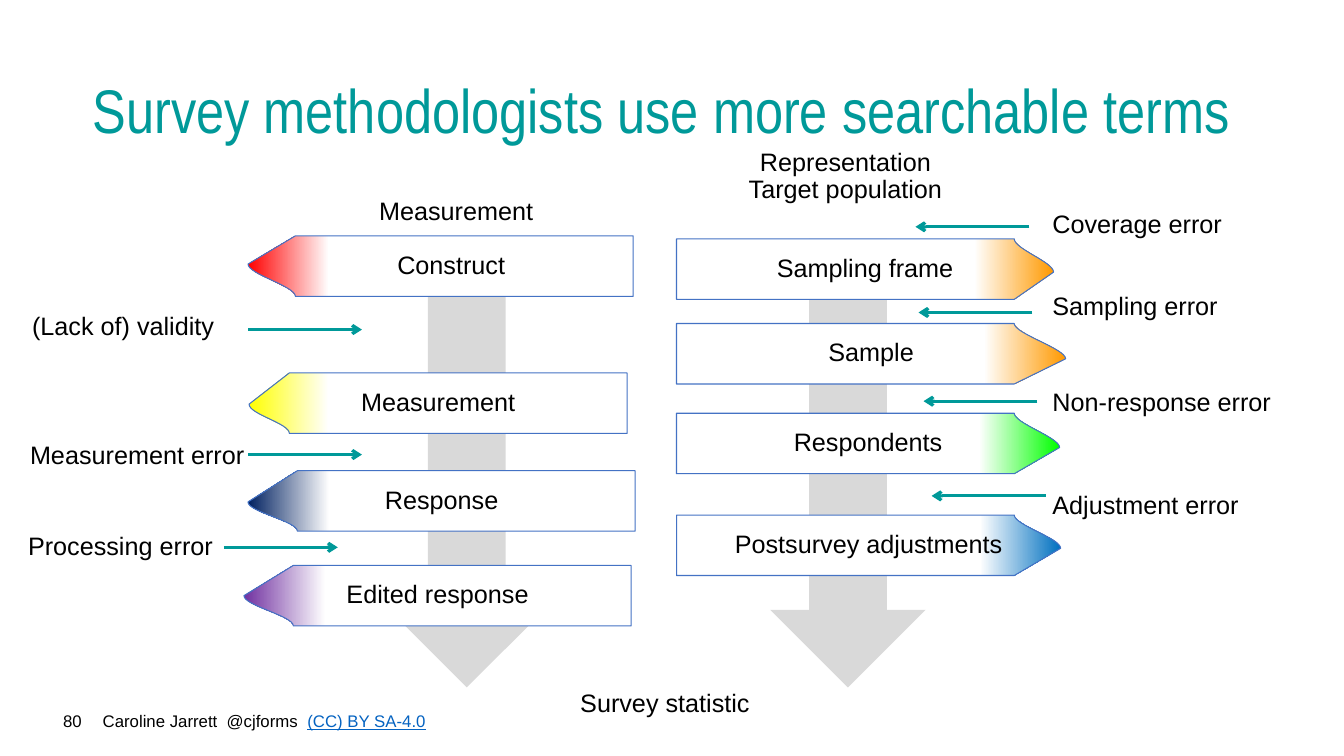
from lxml.etree import SubElement
from pptx import Presentation
from pptx.dml.color import RGBColor
from pptx.enum.shapes import MSO_CONNECTOR, MSO_SHAPE
from pptx.enum.text import MSO_ANCHOR, PP_ALIGN
from pptx.oxml.ns import qn
from pptx.util import Inches, Pt

COLOURS = {
    "text": "000000", "teal": "009999", "link": "0563C1", "outline": "4472C4",
    "flow": "D9D9D9", "white": "FFFFFF", "red": "FF0000", "yellow": "FFFF00",
    "navy": "002060", "purple": "7030A0", "orange": "FF9900", "green": "00FF00",
    "blue": "0070C0",
}

TITLE = "Survey methodologists use more searchable terms"
AUTHOR = "Caroline Jarrett  @cjforms  "
LICENCE = "(CC) BY SA-4.0"
SLIDE_NUMBER = "80"

# text, (left, top, width, height)
HEADINGS = [
    ("Measurement", (2.79, 1.82, 3.47, 0.57)),
    ("Representation\nTarget population", (7.13, 1.47, 2.51, 0.57)),
    ("Survey statistic", (5.34, 6.69, 2.51, 0.6)),
]

# name, colour, top, square end x, pointed end x, depth of the point, left inset
MEASUREMENT_STEPS = [
    ("Construct", "red", 2.34, 6.28, 2.46, 0.28, 0.24),
    ("Measurement", "yellow", 3.7, 6.22, 2.47, 0.31, 0.03),
    ("Response", "navy", 4.67, 6.3, 2.46, 0.31, 0.03),
    ("Edited response", "purple", 5.61, 6.26, 2.42, 0.3, 0.03),
]
REPRESENTATION_STEPS = [
    ("Sampling frame", "orange", 2.37, 6.71, 10.45, 0.33, 0.03),
    ("Sample", "orange", 3.21, 6.71, 10.57, 0.35, 0.03),
    ("Respondents", "green", 4.1, 6.71, 10.51, 0.34, 0.03),
    ("Postsurvey adjustments", "blue", 5.11, 6.71, 10.52, 0.33, 0.03),
]

# text, label left, label centre y, arrow start x, arrow y, arrow direction
ERRORS = [
    ("(Lack of) validity", 0.22, 3.23, 2.46, 3.27, 1),
    ("Measurement error", 0.2, 4.51, 2.46, 4.51, 1),
    ("Processing error", 0.18, 5.41, 2.22, 5.43, 1),
    ("Coverage error", 10.34, 2.22, 10.21, 2.25, -1),
    ("Sampling error", 10.34, 3.03, 10.24, 3.1, -1),
    ("Non-response error", 10.34, 3.98, 10.29, 3.98, -1),
    ("Adjustment error", 10.34, 5.0, 10.37, 4.92, -1),
]

FLOW_LEFTS = [3.86, 7.64]
STEP_HEIGHT, STEP_BODY = 0.6, 3.35
ERROR_ARROW = 1.13
CURVE_PULL, CURVE_SEGMENTS = 0.1, 16


def rgb(name):
    return RGBColor.from_string(COLOURS[name])


def write(shape, text, size=18, font="Arial", colour="text", align=PP_ALIGN.LEFT,
          anchor=MSO_ANCHOR.MIDDLE, spacing=1.0, inset=(0.1, 0.05, 0.1, 0.05), link=""):
    """Fill a shape with one paragraph; link is an underlined ending."""
    frame = shape.text_frame
    frame.word_wrap = True
    frame.vertical_anchor = anchor
    (frame.margin_left, frame.margin_top,
     frame.margin_right, frame.margin_bottom) = map(Inches, inset)
    paragraph = frame.paragraphs[0]
    paragraph.text = text
    paragraph.alignment = align
    paragraph.line_spacing = spacing
    if link:
        paragraph.add_run().text = link
    for run in paragraph.runs:
        is_link = run.text == link
        run.font.size = Pt(size)
        run.font.name = font
        run.font.color.rgb = rgb("link" if is_link else colour)
        run.font.underline = is_link


def add_text(slide, box, text, **text_format):
    write(slide.shapes.add_textbox(*map(Inches, box)), text, **text_format)


def write_centred(shape, text, left_inset=0.03):
    write(shape, text, align=PP_ALIGN.CENTER, spacing=0.9,
          inset=(left_inset, 0.03, 0.03, 0.03))


def curve(start, end, pull):
    """Points along a cubic that leaves and arrives vertically."""
    controls = [start, (start[0], start[1] + pull), (end[0], end[1] - pull), end]
    for step in range(1, CURVE_SEGMENTS + 1):
        t = step / CURVE_SEGMENTS
        weights = [(1 - t) ** 3, 3 * t * (1 - t) ** 2, 3 * t ** 2 * (1 - t), t ** 3]
        yield tuple(sum(w * c[axis] for w, c in zip(weights, controls))
                    for axis in (0, 1))


def add_step(slide, name, colour, top, square_end, tip, depth, left_inset):
    """Box with one pointed end: curved on one side of the tip, straight on the other."""
    points_right = tip > square_end
    direction = 1 if points_right else -1
    shoulder = square_end + direction * STEP_BODY
    bottom = top + STEP_HEIGHT
    curved, straight = (top, bottom) if points_right else (bottom, top)
    outline = [
        (shoulder, curved),
        *curve((shoulder, curved), (tip, top + depth), direction * CURVE_PULL),
        (shoulder, straight), (square_end, straight), (square_end, curved),
    ]
    corners = [(Inches(x), Inches(y)) for x, y in outline]
    builder = slide.shapes.build_freeform(*corners[0])
    builder.add_line_segments(corners[1:], close=True)
    box = builder.convert_to_shape()
    box.shadow.inherit = False
    box.fill.gradient()
    box.fill.gradient_angle = 180 if points_right else 0
    for stop, position, shade in zip(box.fill.gradient_stops, (0, 0.21), (colour, "white")):
        stop.position = position
        stop.color.rgb = rgb(shade)
    box.line.color.rgb = rgb("outline")
    box.line.width = Pt(0.75)
    write_centred(box, name, left_inset)


def add_flow(slide, left):
    flow = slide.shapes.add_shape(MSO_SHAPE.DOWN_ARROW, *map(Inches, (left, 2.37, 1.54, 4.45)))
    flow.shadow.inherit = False
    flow.fill.solid()
    flow.fill.fore_color.rgb = rgb("flow")
    flow.line.fill.background()


def add_error(slide, text, label_left, label_centre, start, y, direction):
    end = start + direction * ERROR_ARROW
    arrow = slide.shapes.add_connector(MSO_CONNECTOR.STRAIGHT,
                                       *map(Inches, (start, y, end, y)))
    arrow.line.color.rgb = rgb("teal")
    arrow.line.width = Pt(2.25)
    SubElement(arrow.line._get_or_add_ln(), qn("a:tailEnd"), type="arrow")
    SubElement(arrow._element.spPr, qn("a:effectLst"))
    add_text(slide, (label_left, label_centre - 0.44, 2.6, 0.88), text)


def main():
    presentation = Presentation()
    presentation.slide_width = Inches(13.33)
    presentation.slide_height = Inches(7.5)
    slide = presentation.slides.add_slide(presentation.slide_layouts[6])

    add_text(slide, (0.92, 7, 5.71, 0.3), AUTHOR, size=12, link=LICENCE,
             anchor=MSO_ANCHOR.TOP)
    add_text(slide, (0.2, 7, 0.71, 0.3), SLIDE_NUMBER, size=12,
             align=PP_ALIGN.RIGHT, anchor=MSO_ANCHOR.TOP)
    add_text(slide, (0.82, 0.4, 11.6, 1.45), TITLE, size=44, font="Arial Narrow",
             colour="teal", spacing=0.9)
    for text, box in HEADINGS:
        write_centred(slide.shapes.add_textbox(*map(Inches, box)), text)
    for left in FLOW_LEFTS:
        add_flow(slide, left)
    for step in MEASUREMENT_STEPS + REPRESENTATION_STEPS:
        add_step(slide, *step)
    for error in ERRORS:
        add_error(slide, *error)

    presentation.save("out.pptx")


if __name__ == "__main__":
    main()
